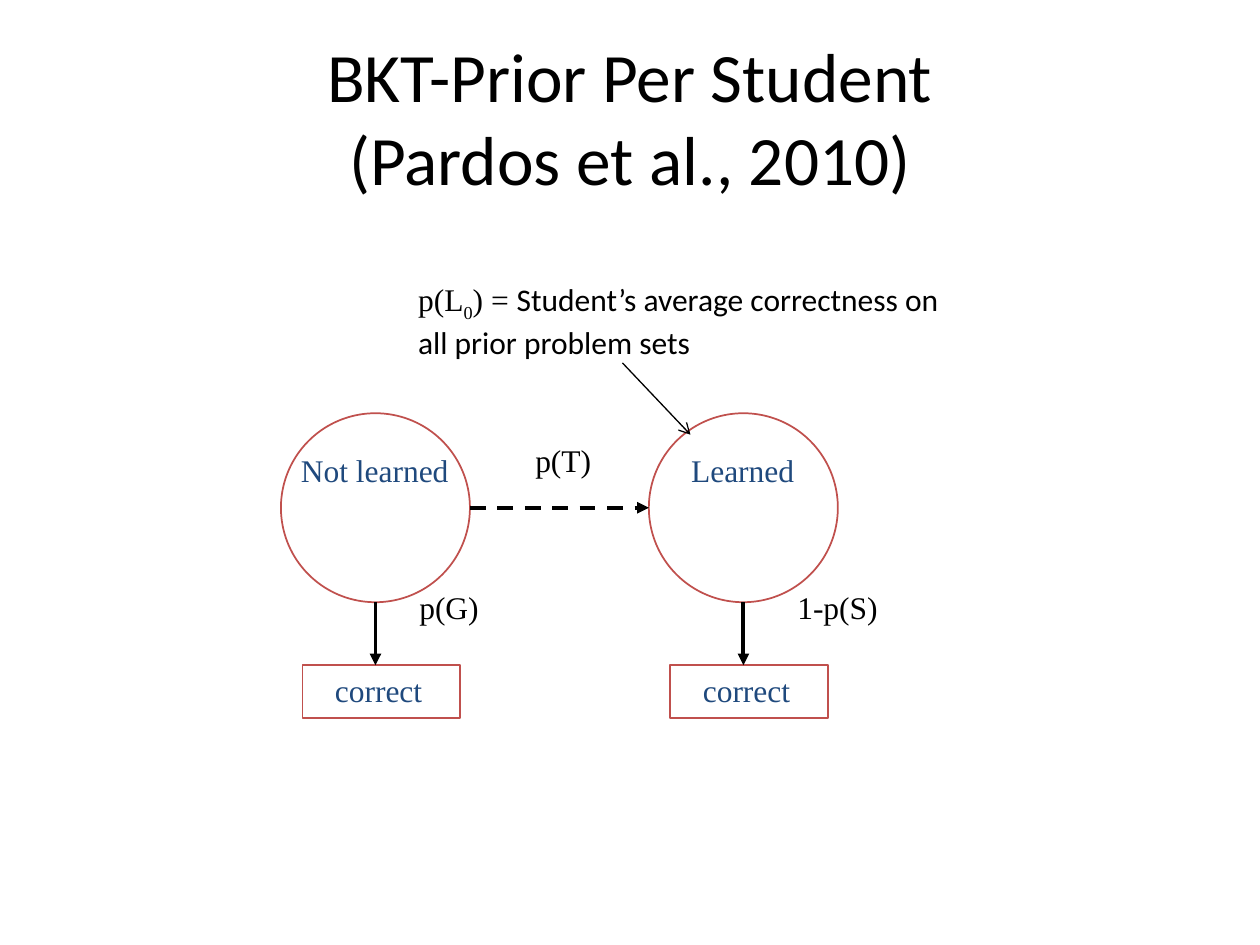
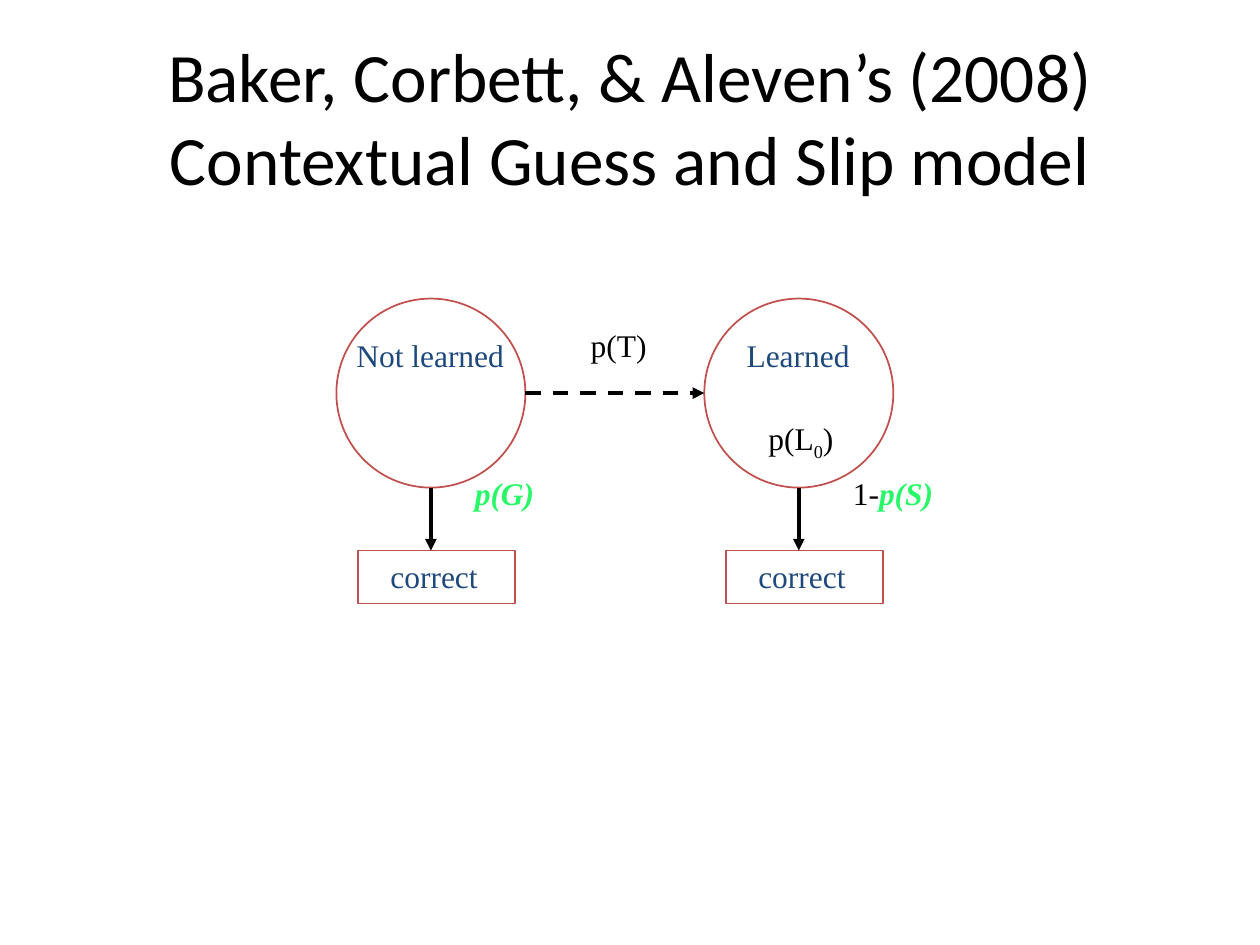
import dataclasses

import lxml.etree
import pptx
import pptx.dml.color
import pptx.enum.dml
import pptx.enum.shapes
import pptx.enum.text
import pptx.oxml.ns
import pptx.util

Inches = pptx.util.Inches
Align = pptx.enum.text.PP_ALIGN
Anchor = pptx.enum.text.MSO_ANCHOR
Kind = pptx.enum.shapes.MSO_SHAPE


@dataclasses.dataclass(frozen=True)
class Theme:
    ink: str = "000000"
    state: str = "1F497D"
    edge: str = "C0504D"
    mark: str = "28F868"
    sans: str = "Calibri"
    serif: str = "Times New Roman"
    title: float = 39.6
    body: float = 18
    thin: float = 0.75
    rim: float = 1
    thick: float = 2.25


THEME = Theme()
STEP = 2.92  # distance between the two states
SIZE = 1.5  # diameter of a state


def tint(code):
    return pptx.dml.color.RGBColor.from_string(code)


def style(font, face, size, color):
    font.name = face
    font.size = pptx.util.Pt(size)
    font.color.rgb = tint(color)


# Text: a part is a string or a pair of string and run style
def add_text(slide, box, parts, face=THEME.serif, size=THEME.body,
             color=THEME.ink, align=Align.LEFT, anchor=Anchor.TOP):
    frame = slide.shapes.add_textbox(*map(Inches, box)).text_frame
    frame.word_wrap = True
    frame.vertical_anchor = anchor
    para = frame.paragraphs[0]
    para.alignment = align
    style(para.font, face, size, color)
    if isinstance(parts, str):
        para.text = parts
        return
    for text, look in parts:
        run = para.add_run()
        run.text = text
        if look == "sub":
            run._r.get_or_add_rPr().set("baseline", "-25000")
        elif look == "sans":
            run.font.name = THEME.sans
        elif look == "mark":
            run.font.bold = run.font.italic = True
            run.font.color.rgb = tint(THEME.mark)


def add_title(slide, text):
    add_text(slide, (0.5, 0.3, 9, 1.25), text, THEME.sans, THEME.title,
             align=Align.CENTER, anchor=Anchor.MIDDLE)


def add_frame(slide, kind, box):
    shape = slide.shapes.add_shape(kind, *map(Inches, box))
    shape.shadow.inherit = False
    shape.fill.background()
    shape.line.color.rgb = tint(THEME.edge)
    shape.line.width = pptx.util.Pt(THEME.rim)


def add_arrow(slide, start, end, width=THEME.thick, head="triangle", dash=False):
    link = slide.shapes.add_connector(
        pptx.enum.shapes.MSO_CONNECTOR.STRAIGHT, *map(Inches, start + end))
    link.line.color.rgb = tint(THEME.ink)
    link.line.width = pptx.util.Pt(width)
    if dash:
        link.line.dash_style = pptx.enum.dml.MSO_LINE.DASH
    qn = pptx.oxml.ns.qn
    tail = lxml.etree.SubElement(link.line._get_or_add_ln(), qn("a:tailEnd"))
    tail.set("type", head)
    lxml.etree.SubElement(link._element.spPr, qn("a:effectLst"))


# A state, its arrow, its answer box and the chance of a correct answer
def add_state(slide, left, top, name, chance, shift):
    add_frame(slide, Kind.OVAL, (left, top, SIZE, SIZE))
    add_text(slide, (left - 0.17, top + 0.25, 1.83, 0.4), name,
             color=THEME.state, align=Align.CENTER)
    add_frame(slide, Kind.RECTANGLE, (left + 0.17, top + 2, 1.25, 0.42))
    add_text(slide, (left + 0.33, top + 2, 1.17, 0.4), "correct",
             color=THEME.state)
    mid = left + SIZE / 2
    add_arrow(slide, (mid, top + SIZE), (mid, top + 2))
    add_text(slide, (left + shift, top + 1.34, 1.17, 0.4), chance)


# The two states and the step from one to the other
def add_model(slide, left, top, guess, slip):
    add_state(slide, left, top, "Not learned", guess, 1)
    add_state(slide, left + STEP, top, "Learned", slip, 1.08)
    mid = top + SIZE / 2
    add_arrow(slide, (left + SIZE, mid), (left + STEP, mid), dash=True)
    add_text(slide, (left + 1.92, top + 0.17, 0.67, 0.4), "p(T)")


def main():
    deck = pptx.Presentation()
    deck.slide_width, deck.slide_height = Inches(10), Inches(7.5)
    blank = deck.slide_layouts[6]

    # Prior per student
    slide = deck.slides.add_slide(blank)
    add_title(slide, "BKT-Prior Per Student\n(Pardos et al., 2010)")
    add_model(slide, 2.23, 3.28, "p(G)", "1-p(S)")
    add_text(slide, (3.22, 2.17, 4.34, 0.71), [
        ("p(L", None), ("0", "sub"), (") = ", None),
        ("Student’s average correctness on all prior problem sets", "sans")])
    add_arrow(slide, (4.94, 2.88), (5.48, 3.45), THEME.thin, "arrow")

    # Contextual guess and slip
    slide = deck.slides.add_slide(blank)
    add_title(slide, "Baker, Corbett, & Aleven’s (2008)\n"
                     "Contextual Guess and Slip model")
    add_model(slide, 2.67, 2.37, [("p(G)", "mark")],
              [("1-", None), ("p(S)", "mark")])
    add_text(slide, (6, 3.28, 1, 0.4),
             [("p(L", None), ("0", "sub"), (")", None)])

    deck.save("out.pptx")


if __name__ == "__main__":
    main()
